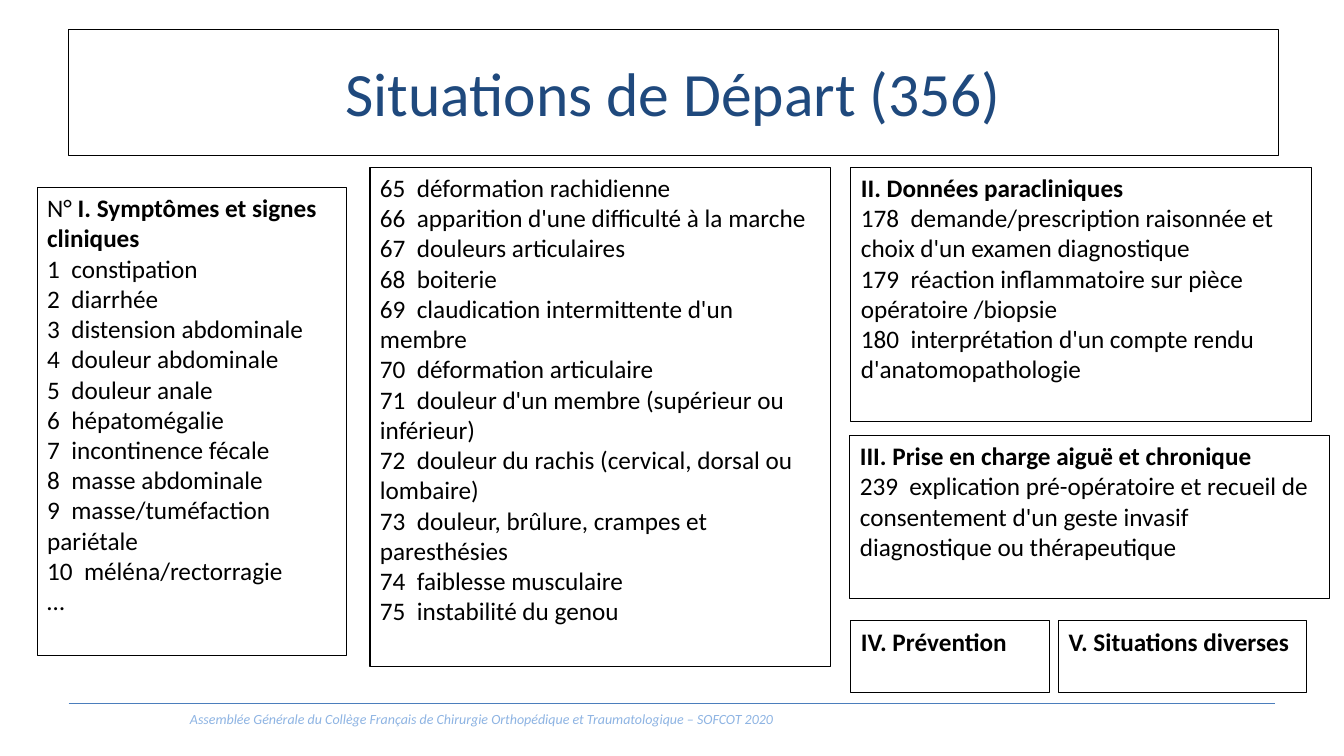
from lxml import etree
from pptx import Presentation
from pptx.dml.color import RGBColor
from pptx.enum.shapes import MSO_CONNECTOR
from pptx.enum.text import MSO_ANCHOR as Anchor, PP_ALIGN as Align
from pptx.oxml.ns import qn
from pptx.util import Inches, Pt

FONT = "Calibri"
BLACK, NAVY, BLUE, PALE_BLUE = "000000", "1F497D", "4B7EBC", "8EB4E3"

SYMPTOMS = [
    "constipation", "diarrhée", "distension abdominale", "douleur abdominale",
    "douleur anale", "hépatomégalie", "incontinence fécale", "masse abdominale",
    "masse/tuméfaction pariétale", "méléna/rectorragie",
]
LOCOMOTOR_SIGNS = [
    "déformation rachidienne",
    "apparition d'une difficulté à la marche",
    "douleurs articulaires",
    "boiterie",
    "claudication intermittente d'un membre",
    "déformation articulaire",
    "douleur d'un membre (supérieur ou inférieur)",
    "douleur du rachis (cervical, dorsal ou lombaire)",
    "douleur, brûlure, crampes et paresthésies",
    "faiblesse musculaire",
    "instabilité du genou",
]
PARACLINICAL_DATA = [
    "demande/prescription raisonnée et choix d'un examen diagnostique",
    "réaction inflammatoire sur pièce opératoire /biopsie",
    "interprétation d'un compte rendu d'anatomopathologie",
]
CARE = ["explication pré-opératoire et recueil de consentement "
        "d'un geste invasif diagnostique ou thérapeutique"]


def color(hex_code):
    return RGBColor.from_string(hex_code)


def set_font(font, size, hex_code, bold=False, italic=False):
    font.name, font.size = FONT, Pt(size)
    font.bold, font.italic = bold, italic
    font.color.rgb = color(hex_code)


def outline(shape):
    shape.line.color.rgb = color(BLACK)
    shape.line.width = Pt(0.75)


def numbered(start, situations):
    return [f"{number}  {situation}"
            for number, situation in enumerate(situations, start)]


def add_title(slide, left, top, width, height):
    title = slide.shapes.title
    title.left, title.top = Inches(left), Inches(top)
    title.width, title.height = Inches(width), Inches(height)
    outline(title)
    title.text_frame.vertical_anchor = Anchor.MIDDLE
    heading = title.text_frame.paragraphs[0]
    heading.text = "Situations de Départ (356)"
    heading.alignment = Align.CENTER
    set_font(heading.font, 44, NAVY)


def add_section(slide, box, heading="", situations=(), prefix="", wrap=True):
    section = slide.shapes.add_textbox(*map(Inches, box))
    outline(section)
    frame = section.text_frame
    frame.word_wrap = wrap
    paragraph = frame.paragraphs[0]

    # Heading, with an optional plain prefix
    if prefix:
        set_font(paragraph.font, 18, BLACK)
        paragraph.add_run().text = prefix
        title_run = paragraph.add_run()
        title_run.text = heading
        title_run.font.bold = True
    elif heading:
        paragraph.text = heading
        set_font(paragraph.font, 18, BLACK, bold=True)

    # Numbered situations
    for index, situation in enumerate(situations):
        if heading or index:
            paragraph = frame.add_paragraph()
        paragraph.text = situation
        set_font(paragraph.font, 18, BLACK)


def add_footer(slide, left, top, width):
    rule = slide.shapes.add_connector(
        MSO_CONNECTOR.STRAIGHT, Inches(left), Inches(top),
        Inches(left + width), Inches(top))
    rule.line.color.rgb = color(BLUE)
    rule.line.width = Pt(0.75)
    etree.SubElement(rule.line._get_or_add_ln().getparent(), qn("a:effectLst"))

    credit = slide.shapes.add_textbox(
        Inches(left), Inches(top + 0.02), Inches(8.19), Inches(0.27))
    credit.text_frame.word_wrap = True
    line = credit.text_frame.paragraphs[0]
    line.text = ("Assemblée Générale du Collège Français de Chirurgie "
                 "Orthopédique et Traumatologique – SOFCOT 2020")
    line.alignment = Align.CENTER
    set_font(line.font, 10, PALE_BLUE, italic=True)


def main():
    deck = Presentation()
    deck.slide_width, deck.slide_height = Inches(13.33), Inches(7.5)
    slide = deck.slides.add_slide(deck.slide_layouts[5])

    add_footer(slide, 0.68, 6.98, 11.97)
    add_title(slide, 0.68, 0.29, 12, 1.25)

    # Clinical signs, left and centre
    add_section(slide, (0.37, 1.86, 3.07, 4.64), "I. Symptômes et signes cliniques",
                numbered(1, SYMPTOMS) + ["…"], prefix="N° ")
    add_section(slide, (3.67, 1.66, 4.57, 4.95),
                situations=numbered(65, LOCOMOTOR_SIGNS))

    # Other families, right
    add_section(slide, (8.44, 1.66, 4.57, 2.52), "II. Données paracliniques",
                numbered(178, PARACLINICAL_DATA))
    add_section(slide, (8.43, 4.32, 4.76, 1.62),
                "III. Prise en charge aiguë et chronique", numbered(239, CARE))
    add_section(slide, (8.44, 6.16, 1.97, 0.71), "IV. Prévention")
    add_section(slide, (10.5, 6.16, 2.46, 0.71), "V. Situations diverses", wrap=False)

    deck.save("out.pptx")


if __name__ == "__main__":
    main()
